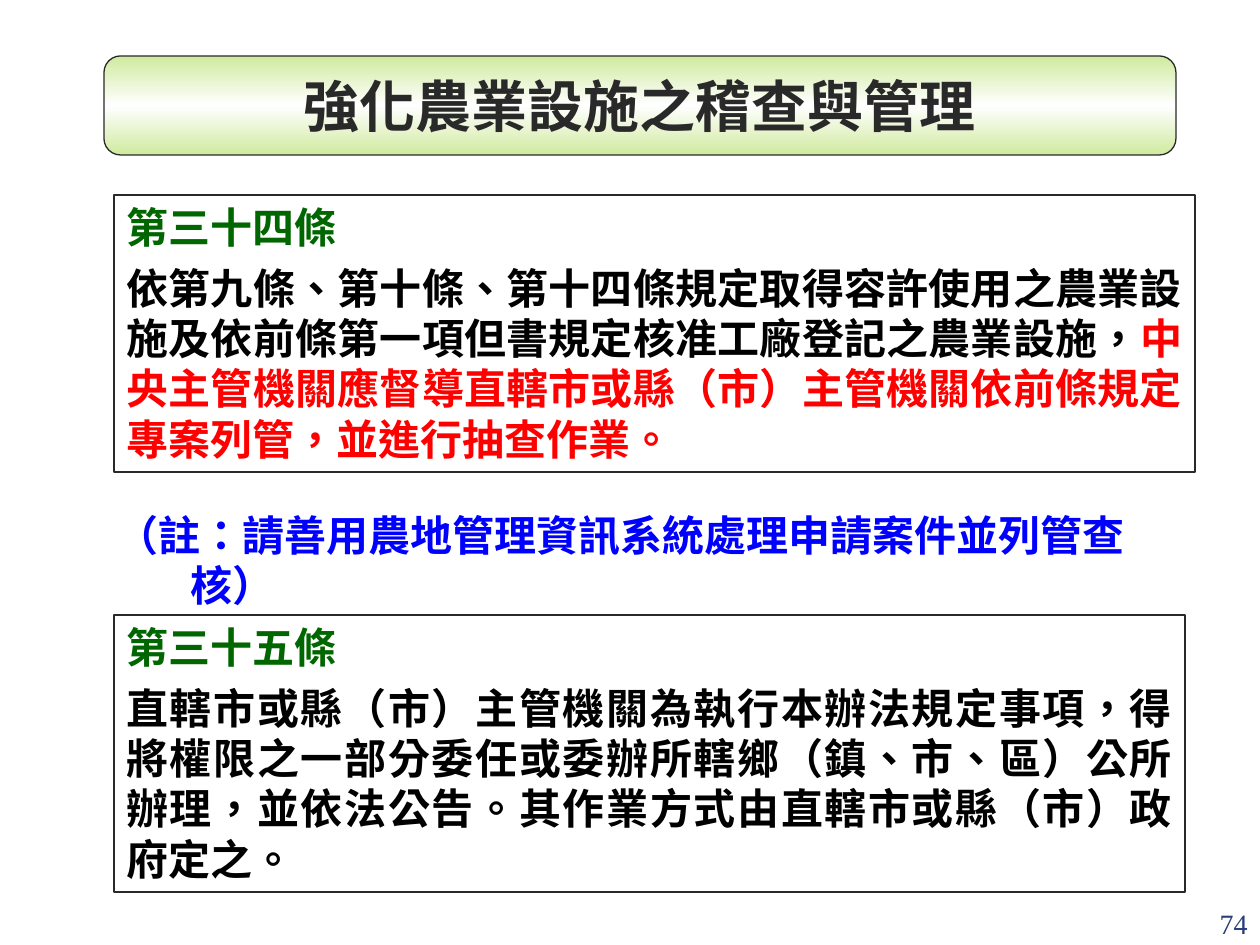
"""Build the slide on inspecting and managing agricultural facilities."""
from dataclasses import dataclass
from copy import deepcopy
from typing import NamedTuple, Optional

from pptx import Presentation
from pptx.dml.color import RGBColor
from pptx.enum.lang import MSO_LANGUAGE_ID as Language
from pptx.enum.shapes import MSO_SHAPE as Shape
from pptx.enum.text import MSO_ANCHOR as Anchor, PP_ALIGN as Align
from pptx.oxml.ns import qn
from pptx.util import Emu, Pt

EMU_PER_PX = 914400 / 126


@dataclass(frozen=True)
class Theme:
    font: str = "Times New Roman"
    ink: str = "292929"
    heading: str = "006600"
    body: str = "000000"
    emphasis: str = "FF0000"
    note: str = "0000FF"
    number: str = "2A3D7A"
    banner_edge: str = "CFEA9E"
    banner_middle: str = "FFFFFF"
    title_size: int = 32
    body_size: int = 24
    number_size: int = 16
    paragraph_gap: int = 6


class Box(NamedTuple):
    left: int
    top: int
    width: int
    height: int


class Words(NamedTuple):
    text: str
    color: str


class Article(NamedTuple):
    box: Box
    heading: str
    body: tuple[Words, ...]


THEME = Theme()
TITLE_BOX = Box(104, 56, 1072, 99)
NOTE_BOX = Box(104, 503, 1081, 63)
NUMBER_BOX = Box(1134, 883, 126, 63)
NOTE_INDENT = 74
ARTICLES = (
    Article(Box(114, 195, 1081, 277), "第三十四條", (
        Words("依第九條、第十條、第十四條規定取得容許使用之農業設施"
              "及依前條第一項但書規定核准工廠登記之農業設施，", THEME.body),
        Words("中央主管機關應督導直轄市或縣（市）主管機關依前條規定"
              "專案列管，並進行抽查作業。", THEME.emphasis),
    )),
    Article(Box(114, 615, 1071, 277), "第三十五條", (
        Words("直轄市或縣（市）主管機關為執行本辦法規定事項，得將權限之一部分"
              "委任或委辦所轄鄉（鎮、市、區）公所辦理，並依法公告。"
              "其作業方式由直轄市或縣（市）政府定之。", THEME.body),
    )),
)


def px(length: int) -> Emu:
    return Emu(round(length * EMU_PER_PX))


def place(box: Box) -> tuple[Emu, ...]:
    return tuple(px(length) for length in box)


def add_words(paragraph, words: Words, size: int = THEME.body_size, bold: bool = True) -> None:
    run = paragraph.add_run()
    run.text = words.text
    run.font.name = THEME.font
    run.font.size = Pt(size)
    run.font.bold = bold
    run.font.color.rgb = RGBColor.from_string(words.color)
    run.font.language_id = Language.TRADITIONAL_CHINESE


def add_outline(slide, kind: Shape, box: Box, line_width: float):
    shape = slide.shapes.add_shape(kind, *place(box))
    shape.shadow.inherit = False
    shape.fill.background()
    shape.line.color.rgb = RGBColor.from_string(THEME.ink)
    shape.line.width = Pt(line_width)
    return shape


def add_title(slide, text: str) -> None:
    shape = add_outline(slide, Shape.ROUNDED_RECTANGLE, TITLE_BOX, 0.75)
    shape.fill.gradient()
    shape.fill.gradient_angle = 90
    stop_list = shape._element.spPr.find(".//" + qn("a:gsLst"))
    stop_list.append(deepcopy(stop_list[0]))
    colors = (THEME.banner_edge, THEME.banner_middle, THEME.banner_edge)
    for index, (stop, color) in enumerate(zip(shape.fill.gradient_stops, colors)):
        stop.position = index / 2
        stop.color.rgb = RGBColor.from_string(color)
    frame = shape.text_frame
    frame.word_wrap = False
    frame.vertical_anchor = Anchor.MIDDLE
    paragraph = frame.paragraphs[0]
    paragraph.alignment = Align.CENTER
    add_words(paragraph, Words(text, THEME.ink), THEME.title_size)


def add_article(slide, article: Article) -> None:
    frame = add_outline(slide, Shape.RECTANGLE, article.box, 1.5).text_frame
    frame.word_wrap = True
    frame.vertical_anchor = Anchor.TOP
    heading, body = frame.paragraphs[0], frame.add_paragraph()
    heading.alignment = body.alignment = Align.JUSTIFY
    body.space_before = Pt(THEME.paragraph_gap)
    add_words(heading, Words(article.heading, THEME.heading))
    for words in article.body:
        add_words(body, words)


def add_text(slide, box: Box, words: Words, size: int, bold: bool, anchor: Anchor,
             align: Align, hanging: Optional[int] = None) -> None:
    frame = slide.shapes.add_textbox(*place(box)).text_frame
    frame.word_wrap = True
    frame.vertical_anchor = anchor
    paragraph = frame.paragraphs[0]
    paragraph.alignment = align
    if hanging:
        properties = paragraph._p.get_or_add_pPr()
        properties.set("marL", str(px(hanging)))
        properties.set("indent", str(-px(hanging)))
    add_words(paragraph, words, size, bold)


def main() -> None:
    presentation = Presentation()
    presentation.slide_width, presentation.slide_height = px(1260), px(945)
    slide = presentation.slides.add_slide(presentation.slide_layouts[6])
    add_title(slide, "強化農業設施之稽查與管理")
    for article in ARTICLES:
        add_article(slide, article)
    note = Words("（註：請善用農地管理資訊系統處理申請案件並列管查核）", THEME.note)
    add_text(slide, NOTE_BOX, note, THEME.body_size, True, Anchor.TOP, Align.LEFT, NOTE_INDENT)
    add_text(slide, NUMBER_BOX, Words("74", THEME.number), THEME.number_size, False,
             Anchor.BOTTOM, Align.RIGHT)
    presentation.save("out.pptx")


if __name__ == "__main__":
    main()
